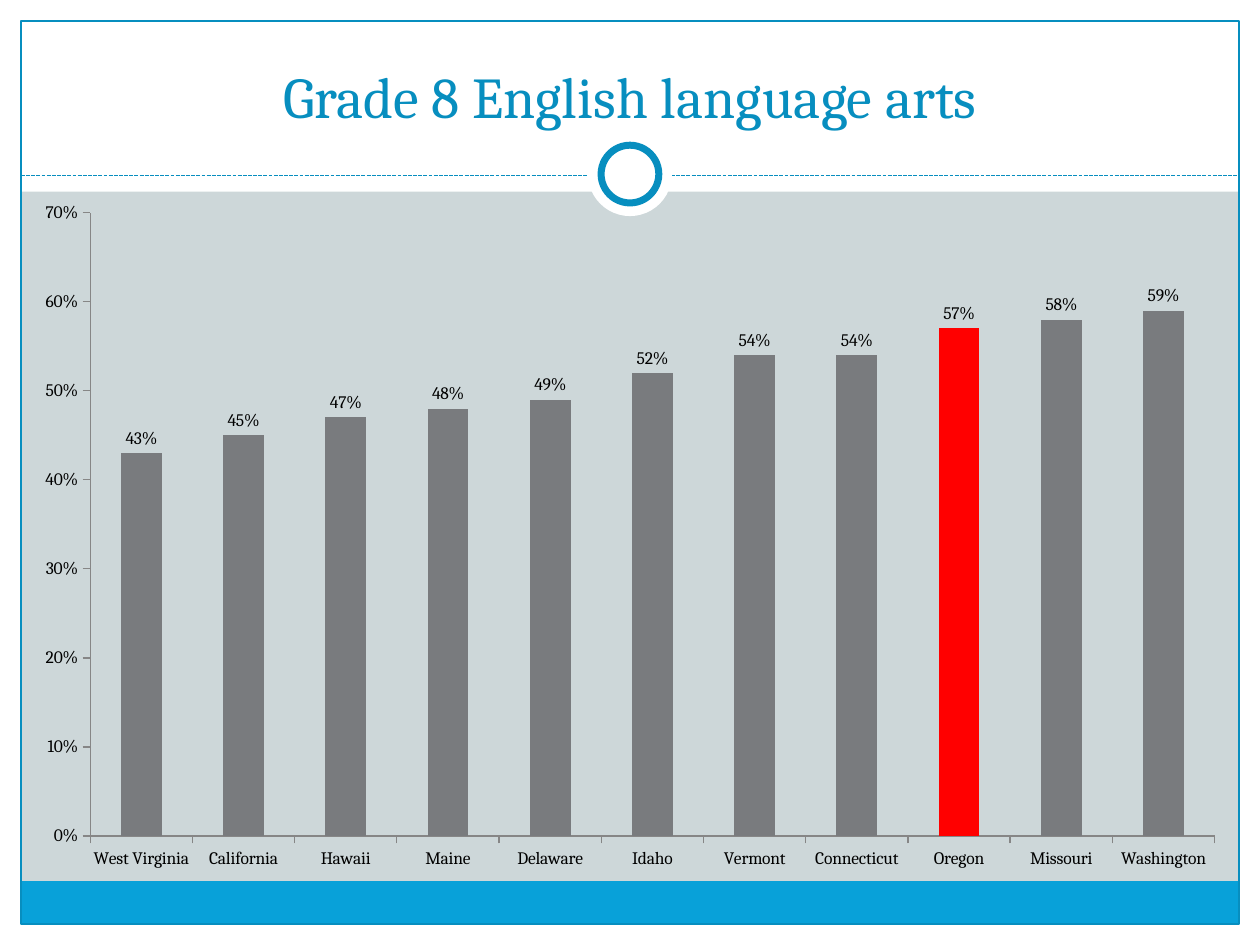
from lxml import etree
from pptx import Presentation
from pptx.chart.data import CategoryChartData
from pptx.dml.color import RGBColor
from pptx.enum.chart import XL_CHART_TYPE, XL_LABEL_POSITION, XL_TICK_MARK
from pptx.enum.dml import MSO_LINE
from pptx.enum.shapes import MSO_CONNECTOR, MSO_SHAPE
from pptx.enum.text import MSO_ANCHOR, PP_ALIGN
from pptx.oxml import parse_xml
from pptx.oxml.ns import nsdecls, qn
from pptx.util import Pt

RECTANGLE, OVAL = MSO_SHAPE.RECTANGLE, MSO_SHAPE.OVAL
STRAIGHT = MSO_CONNECTOR.STRAIGHT
DASH = MSO_LINE.SQUARE_DOT
COLUMNS = XL_CHART_TYPE.COLUMN_CLUSTERED
OUTSIDE_END = XL_LABEL_POSITION.OUTSIDE_END
TICK_OUT, TICK_NONE = XL_TICK_MARK.OUTSIDE, XL_TICK_MARK.NONE
BOTTOM, CENTER = MSO_ANCHOR.BOTTOM, PP_ALIGN.CENTER

FONT = "Cambria"
WIDTH, HEIGHT, MARGIN = 720, 540, 12
WHITE, BLACK, BLUE, BAND = "FFFFFF", "000000", "078EBF", "08A1D9"
GROUND, GREY, RED, AXIS = "CDD7D9", "797B7E", "FF0000", "868686"

SCORES = {
    "West Virginia": 0.43, "California": 0.45, "Hawaii": 0.47, "Maine": 0.48,
    "Delaware": 0.49, "Idaho": 0.52, "Vermont": 0.54, "Connecticut": 0.54,
    "Oregon": 0.57, "Missouri": 0.58, "Washington": 0.59,
}
HIGHLIGHT = "Oregon"


def color(value):
    return RGBColor.from_string(value)


def paint(fill, value):
    fill.solid()
    fill.fore_color.rgb = color(value)


def stroke(line, value, weight):
    line.color.rgb = color(value)
    line.width = Pt(weight)


def add_shape(page, kind, left, top, width, height, fill=None, line=None, weight=0.75):
    shape = page.shapes.add_shape(kind, Pt(left), Pt(top), Pt(width), Pt(height))
    shape.shadow.inherit = False
    if fill:
        paint(shape.fill, fill)
    else:
        shape.fill.background()
    if line:
        stroke(shape.line, line, weight)
    else:
        shape.line.fill.background()


def add_circle(page, middle, diameter, **style):
    add_shape(page, OVAL, (WIDTH - diameter) / 2, middle - diameter / 2,
              diameter, diameter, **style)


def add_dashed_rule(page, left, right, top):
    rule = page.shapes.add_connector(STRAIGHT, Pt(left), Pt(top), Pt(right), Pt(top))
    stroke(rule.line, BLUE, 0.75)
    rule.line.dash_style = DASH
    etree.SubElement(rule._element.spPr, qn("a:effectLst"))


def write_text(frame, text, size, value, align):
    para = frame.paragraphs[0]
    para.alignment = align
    span = para.add_run()
    span.text = text
    span.font.name = FONT
    span.font.size = Pt(size)
    span.font.color.rgb = color(value)


def add_title(page, text):
    title = page.shapes.title
    title.left, title.top, title.width, title.height = Pt(24), Pt(18), Pt(672), Pt(60)
    title.text_frame.word_wrap = True
    title.text_frame.vertical_anchor = BOTTOM
    write_text(title.text_frame, text, size=33, value=BLUE, align=CENTER)
    # Bring the title in front of the frame
    page.shapes._spTree.append(title._element)


def add_frame(page):
    inner_width = WIDTH - 2 * MARGIN
    # White borders
    add_shape(page, RECTANGLE, 0, HEIGHT - MARGIN, WIDTH, MARGIN, fill=WHITE)
    add_shape(page, RECTANGLE, 0, 0, WIDTH, 109.5, fill=WHITE)
    for left in (0, WIDTH - MARGIN):
        add_shape(page, RECTANGLE, left, 0, MARGIN, HEIGHT, fill=WHITE)
    # Bottom band and outline
    add_shape(page, RECTANGLE, MARGIN, 503.5, inner_width, 24.5, fill=BAND)
    add_shape(page, RECTANGLE, MARGIN, MARGIN, inner_width, HEIGHT - 2 * MARGIN, line=BLUE)
    # Divider with ring
    add_dashed_rule(page, MARGIN, WIDTH - MARGIN, 100.5)
    add_circle(page, 99.5, 48, fill=WHITE)
    add_circle(page, 99.5, 33, fill=WHITE, line=BLUE, weight=4)


def format_axis(axis):
    axis.has_major_gridlines = False
    axis.major_tick_mark = TICK_OUT
    axis.minor_tick_mark = TICK_NONE
    stroke(axis.format.line, AXIS, 0.75)


def add_score_chart(page):
    data = CategoryChartData(number_format="0%")
    data.categories = list(SCORES)
    data.add_series("Series 1", list(SCORES.values()))
    chart = page.shapes.add_chart(COLUMNS, Pt(12), Pt(108), Pt(696), Pt(396), data).chart
    chart.has_title = False
    chart.has_legend = False
    chart.font.name = FONT
    chart.font.size = Pt(10)
    chart.font.color.rgb = color(BLACK)
    # Transparent chart area
    chart._chartSpace.find(qn("c:txPr")).addprevious(parse_xml(
        f'<c:spPr {nsdecls("c", "a")}><a:noFill/><a:ln><a:noFill/></a:ln></c:spPr>'))
    # Axes
    format_axis(chart.category_axis)
    format_axis(chart.value_axis)
    chart.value_axis.minimum_scale = 0
    chart.value_axis.maximum_scale = 0.7
    chart.value_axis.major_unit = 0.1
    chart.value_axis.tick_labels.number_format = "0%"
    chart.value_axis.tick_labels.number_format_is_linked = False
    # Columns and value labels
    plot = chart.plots[0]
    plot.gap_width = 150
    plot.vary_by_categories = False
    series = plot.series[0]
    paint(series.format.fill, GREY)
    paint(series.points[list(SCORES).index(HIGHLIGHT)].format.fill, RED)
    labels = series.data_labels
    labels.show_value = True
    labels.position = OUTSIDE_END
    labels.number_format = "0%"
    labels.number_format_is_linked = False


def main():
    deck = Presentation()
    deck.slide_width, deck.slide_height = Pt(WIDTH), Pt(HEIGHT)
    page = deck.slides.add_slide(deck.slide_layouts[5])
    paint(page.background.fill, GROUND)
    add_frame(page)
    add_title(page, "Grade 8 English language arts")
    add_score_chart(page)
    deck.save("out.pptx")


if __name__ == "__main__":
    main()
